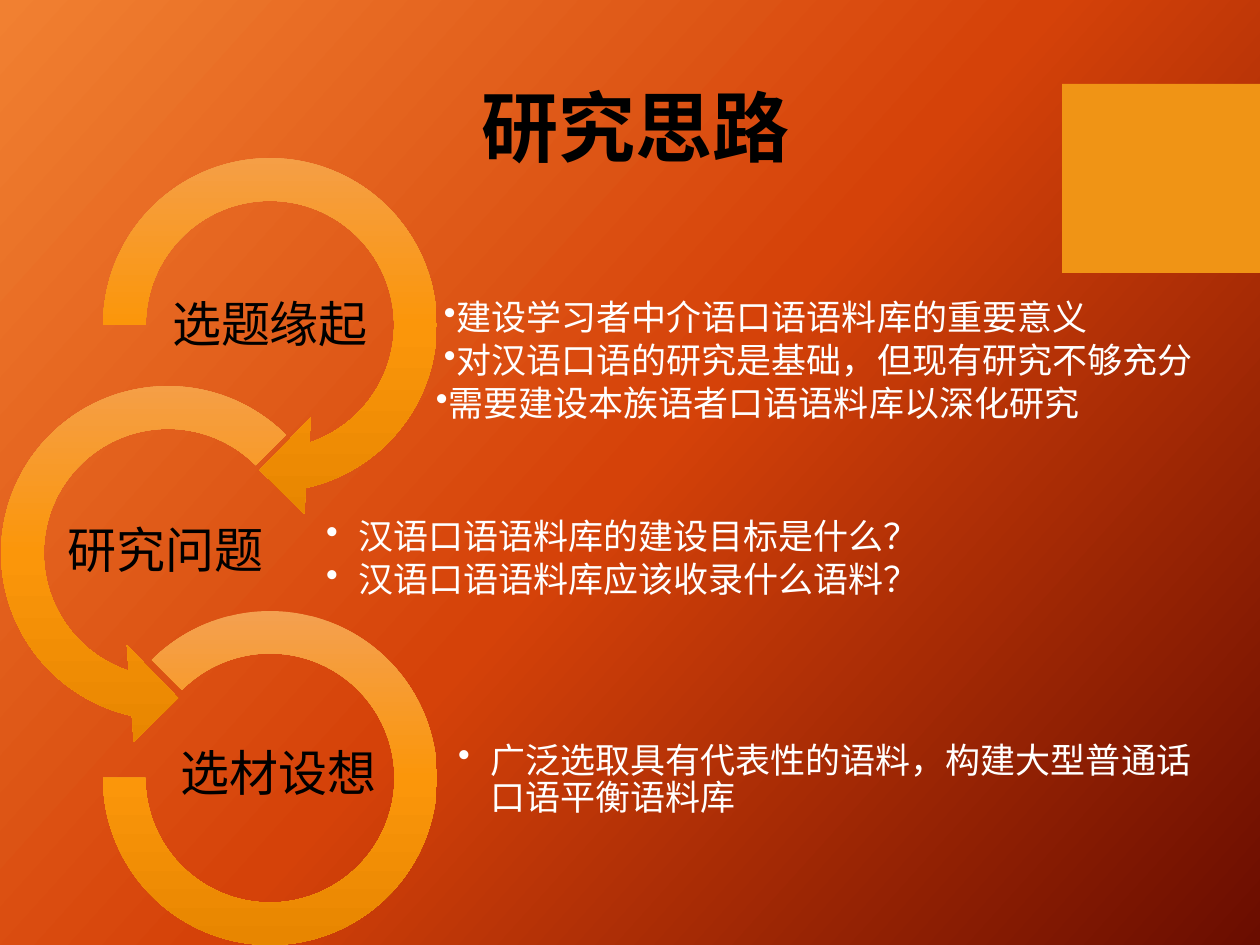
"""Build the research outline slide: three linked rings with their points."""
from copy import deepcopy
from dataclasses import dataclass

from lxml.etree import SubElement
from pptx import Presentation
from pptx.dml.color import RGBColor
from pptx.enum.shapes import MSO_SHAPE
from pptx.enum.text import MSO_ANCHOR, PP_ALIGN
from pptx.oxml.ns import qn
from pptx.util import Pt

PX = 914400 / 126


@dataclass(frozen=True)
class Theme:
    font: str = "Lato"
    dark: str = "000000"
    light: str = "FFFFFF"
    accent: str = "F09415"
    backdrop: tuple = ("F18031", "D54209", "6A0D00")
    ring: tuple = ("F4A050", "FB960A", "E88600")
    title_size: int = 44
    label_size: int = 28
    point_size: int = 20


THEME = Theme()
TITLE = ("研究思路", (469, 73, 466, 147))
ACCENT_BOX = (1062, 84, 198, 189)
STAGES = [
    {
        "label": ("选题缘起", (127, 273, 286, 108)),
        "ring": (MSO_SHAPE.CIRCULAR_ARROW, (76, 131, 388, 388),
                 (0.11, 11.42, 45, 108, 0.125)),
        "points": ["建设学习者中介语口语语料库的重要意义",
                   "对汉语口语的研究是基础，但现有研究不够充分",
                   "需要建设本族语者口语语料库以深化研究"],
        "indents": [(8, 0), (8, 0), (8, -8)],
        "points_box": (435, 280, 879, 165),
    },
    {
        "label": ("研究问题", (58, 499, 215, 108)),
        "ring": (MSO_SHAPE.LEFT_CIRCULAR_ARROW, (-26, 359, 388, 388),
                 (0.11, 11.42, 63, 189, 0.125)),
        "points": ["汉语口语语料库的建设目标是什么？",
                   "汉语口语语料库应该收录什么语料？"],
        "indents": [(32, -32)] * 2,
        "points_box": (325, 493, 601, 133),
    },
    {
        "label": ("选材设想", (171, 722, 215, 108)),
        "ring": (MSO_SHAPE.BLOCK_ARC, (103, 611, 334, 334), (135, 108, 0.127)),
        "points": ["广泛选取具有代表性的语料，构建大型普通话口语平衡语料库"],
        "indents": [(32, -32)],
        "points_box": (457, 703, 751, 155),
    },
]


def emu(*lengths):
    return [round(length * PX) for length in lengths]


def paint_gradient(fill, element, colours, angle):
    fill.gradient()
    fill.gradient_angle = 360 - angle
    stop_list = next(element.iter(qn("a:gsLst")))
    stop_list.insert(1, deepcopy(stop_list[0]))
    for index, (stop, colour) in enumerate(zip(fill.gradient_stops, colours)):
        stop.color.rgb = RGBColor.from_string(colour)
        stop.position = index / (len(colours) - 1)


def add_figure(page, kind, place, adjustments=()):
    shape = page.shapes.add_shape(kind, *emu(*place))
    shape.shadow.inherit = False
    shape.line.fill.background()
    for index, value in enumerate(adjustments):
        shape.adjustments[index] = value
    return shape


def set_bullet(para, margin, indent):
    properties = para._p.get_or_add_pPr()
    for name, length in zip(("marL", "indent"), emu(margin, indent)):
        properties.set(name, str(length))
    SubElement(properties, qn("a:buChar")).set("char", "•")


def add_text(page, lines, place, *, size, colour, bold=False, inset=None,
             anchor=MSO_ANCHOR.MIDDLE, align=PP_ALIGN.LEFT, spacing=0.9,
             after=0, indents=()):
    frame = page.shapes.add_textbox(*emu(*place)).text_frame
    frame.word_wrap = True
    frame.vertical_anchor = anchor
    if inset is not None:
        (frame.margin_left, frame.margin_top,
         frame.margin_right, frame.margin_bottom) = emu(*[inset] * 4)
    for index, line in enumerate(lines):
        para = frame.add_paragraph() if index else frame.paragraphs[0]
        if indents:
            set_bullet(para, *indents[index])
        para.alignment = align
        para.line_spacing = spacing
        para.space_after = Pt(after)
        span = para.add_run()
        span.text = line
        span.font.name = THEME.font
        span.font.size = Pt(size)
        span.font.bold = bold
        span.font.color.rgb = RGBColor.from_string(colour)


def add_stage(page, stage):
    ring = add_figure(page, *stage["ring"])
    paint_gradient(ring.fill, ring._element, THEME.ring, 90)
    add_text(page, stage["points"], stage["points_box"], size=THEME.point_size,
             colour=THEME.light, inset=1, after=3, indents=stage["indents"])
    label, place = stage["label"]
    add_text(page, [label], place, size=THEME.label_size, colour=THEME.dark,
             inset=2, align=PP_ALIGN.CENTER)


def main():
    deck = Presentation()
    deck.slide_width, deck.slide_height = emu(1260, 945)
    page = deck.slides.add_slide(deck.slide_layouts[6])
    paint_gradient(page.background.fill, page._element, THEME.backdrop, 42)
    accent = add_figure(page, MSO_SHAPE.RECTANGLE, ACCENT_BOX)
    accent.fill.solid()
    accent.fill.fore_color.rgb = RGBColor.from_string(THEME.accent)
    title, place = TITLE
    add_text(page, [title], place, size=THEME.title_size, colour=THEME.dark,
             bold=True, anchor=MSO_ANCHOR.TOP, spacing=1.0)
    for stage in STAGES:
        add_stage(page, stage)
    deck.save("out.pptx")


if __name__ == "__main__":
    main()
